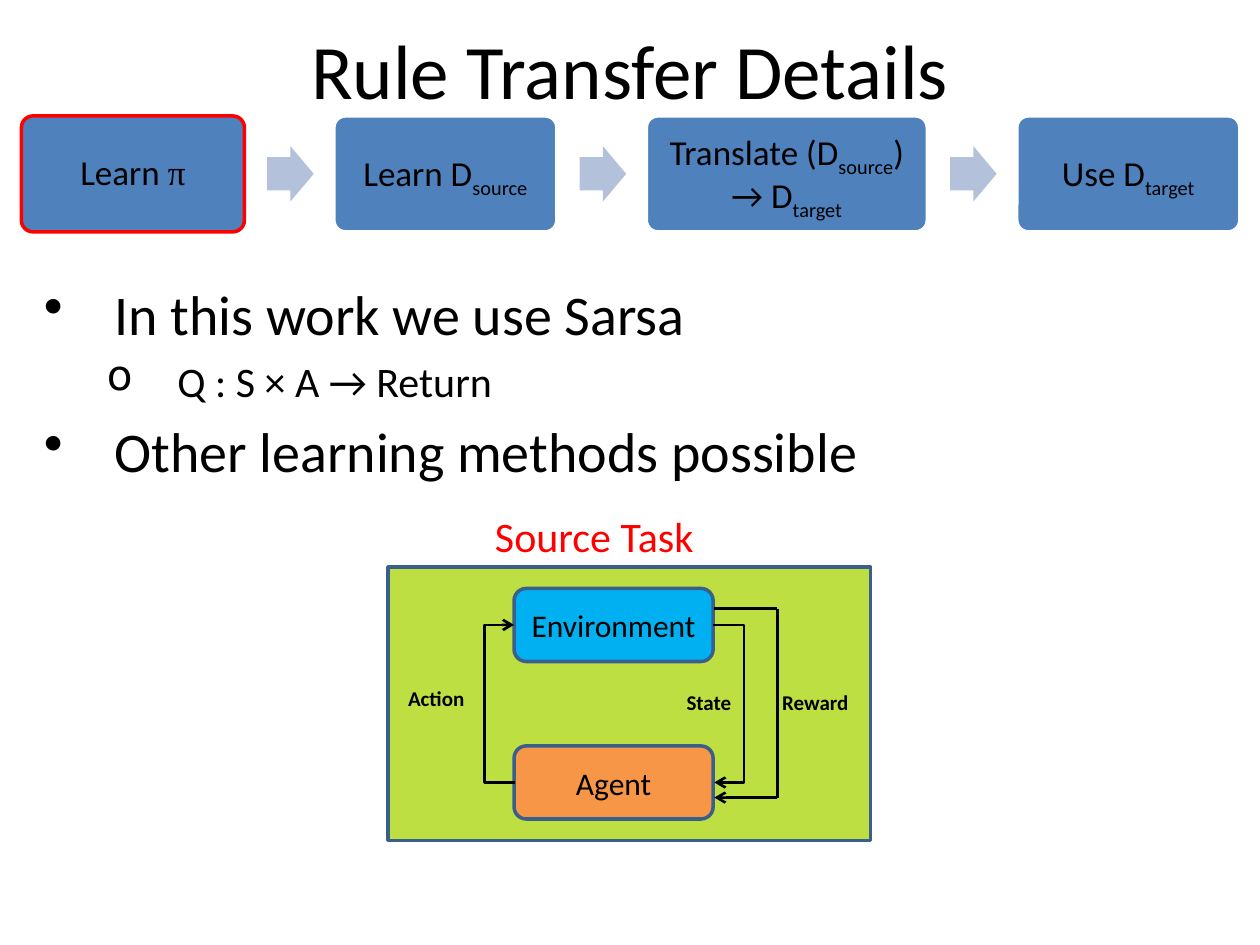
from pptx import Presentation
from pptx import util as u
from pptx.dml.color import RGBColor
from pptx.enum import shapes, text
from pptx.oxml.ns import qn
from lxml import etree

COLORS = {
    "black": "000000", "white": "FFFFFF", "red": "FF0000",
    "step": "4F81BD", "step_arrow": "B3C1DB", "outline": "3A5F8C",
    "task": "BDDF41", "environment": "00B0F0", "agent": "F79646",
}
SHAPE = shapes.MSO_SHAPE
CONNECTOR = shapes.MSO_CONNECTOR
ALIGN = text.PP_ALIGN
ANCHOR = text.MSO_ANCHOR


def rgb(name):
    return RGBColor.from_string(COLORS[name])


def inches(*values):
    return [u.Inches(value) for value in values]


def write(paragraph, parts, size=18, color="black", bold=False,
          align=ALIGN.LEFT, spacing=None):
    paragraph.alignment = align
    paragraph.line_spacing = spacing
    for part in parts:
        words, style = part if isinstance(part, tuple) else (part, None)
        run = paragraph.add_run()
        run.text = words
        run.font.size = u.Pt(size)
        run.font.bold = bold
        run.font.name = "Times New Roman" if style == "greek" else "Calibri"
        run.font.color.rgb = rgb(color)
        if style == "sub":
            run.font._element.set("baseline", "-25000")


def add_label(slide, box, words, wrap=False, anchor=ANCHOR.TOP, **style):
    frame = slide.shapes.add_textbox(*inches(*box)).text_frame
    frame.word_wrap = wrap
    frame.vertical_anchor = anchor
    write(frame.paragraphs[0], [words], **style)


def add_block(slide, kind, box, fill, line=None, adjustments=(), parts=(), **style):
    block = slide.shapes.add_shape(kind, *inches(*box))
    block.shadow.inherit = False
    for index, value in enumerate(adjustments):
        block.adjustments[index] = value
    block.fill.solid()
    block.fill.fore_color.rgb = rgb(fill)
    if line:
        block.line.color.rgb = rgb(line)
        block.line.width = u.Pt(2)
    else:
        block.line.fill.background()
    frame = block.text_frame
    frame.word_wrap = True
    frame.vertical_anchor = ANCHOR.MIDDLE
    if parts:
        write(frame.paragraphs[0], parts, align=ALIGN.CENTER, **style)
    return block


def add_wire(slide, start, end, kind=CONNECTOR.STRAIGHT, arrow=False, bend=None):
    wire = slide.shapes.add_connector(kind, *inches(*start, *end))
    wire.line.color.rgb = rgb("black")
    wire.line.width = u.Pt(1.5)
    properties = wire._element.spPr
    if arrow:
        etree.SubElement(wire.line._get_or_add_ln(), qn("a:tailEnd"), type="arrow")
    if bend:
        guides = properties.find(qn("a:prstGeom")).get_or_add_avLst()
        etree.SubElement(guides, qn("a:gd"), name="adj1", fmla=f"val {bend}")
    etree.SubElement(properties, qn("a:effectLst"))


def add_process(slide):
    steps = [
        (1.77, "red", ["Learn ", ("π", "greek")]),
        (1.77, "white", ["Learn D", ("source", "sub")]),
        (2.23, "white", ["Translate (D", ("source", "sub"), ") → D", ("target", "sub")]),
        (1.77, "white", ["Use D", ("target", "sub")]),
    ]
    left, gap = 0.17, 0.71
    for number, (width, line, parts) in enumerate(steps):
        if number:
            add_block(slide, SHAPE.RIGHT_ARROW, (left - gap + 0.18, 1.16, 0.37, 0.44),
                      "step_arrow", adjustments=(0.6, 0.5))
        add_block(slide, SHAPE.ROUNDED_RECTANGLE, (left, 0.92, width, 0.92), "step",
                  line, (0.1,), parts, size=20, spacing=0.9)
        left += width + gap


def add_bullets(slide):
    frame = slide.shapes.add_textbox(*inches(0.25, 2.17, 9.58, 1.78)).text_frame
    frame.word_wrap = True
    points = [
        ("In this work we use Sarsa", 0, 32, "•"),
        ("Q : S × A → Return", 1, 24, "o"),
        ("Other learning methods possible", 0, 32, "•"),
    ]
    for number, (words, level, size, bullet) in enumerate(points):
        paragraph = frame.add_paragraph() if number else frame.paragraphs[0]
        paragraph.level = level
        write(paragraph, [words], size=size)
        paragraph.space_before = u.Pt(size * 0.2)
        properties = paragraph._p.get_or_add_pPr()
        properties.set("marL", str(u.Inches(0.56 + level * 0.5)))
        properties.set("indent", str(u.Inches(-0.56)))
        etree.SubElement(properties, qn("a:buChar"), char=bullet)


def add_source_task(slide):
    add_block(slide, SHAPE.RECTANGLE, (3.08, 4.5, 3.83, 2.17), "task", "outline")
    for name, top in (("Environment", 4.67), ("Agent", 5.92)):
        add_block(slide, SHAPE.ROUNDED_RECTANGLE, (4.08, top, 1.58, 0.58),
                  name.lower(), "outline", parts=[name])

    add_wire(slide, (4.09, 6.21), (4.08, 4.96), CONNECTOR.ELBOW, True, 2500000)
    add_wire(slide, (5.66, 4.96), (5.67, 6.21), CONNECTOR.ELBOW, True, 2500000)
    add_wire(slide, (5.67, 4.83), (6.17, 4.83))
    add_wire(slide, (6.17, 4.83), (6.17, 6.33))
    add_wire(slide, (6.17, 6.33), (5.67, 6.33), arrow=True)

    for words, left, top, width in (("Action", 3.14, 5.39, 0.73),
                                    ("State", 5.35, 5.42, 0.61),
                                    ("Reward", 6.11, 5.42, 0.81)):
        add_label(slide, (left, top, width, 0.3), words, size=12, bold=True)
    add_label(slide, (3.83, 4, 2.05, 0.5), "Source Task", size=24, color="red")


def main():
    deck = Presentation()
    deck.slide_width, deck.slide_height = inches(10, 7.5)
    slide = deck.slides.add_slide(deck.slide_layouts[6])
    add_label(slide, (0.5, -0.08, 9, 1.25), "Rule Transfer Details", wrap=True,
              anchor=ANCHOR.MIDDLE, size=44, align=ALIGN.CENTER)
    add_process(slide)
    add_source_task(slide)
    add_bullets(slide)
    deck.save("out.pptx")


if __name__ == "__main__":
    main()
